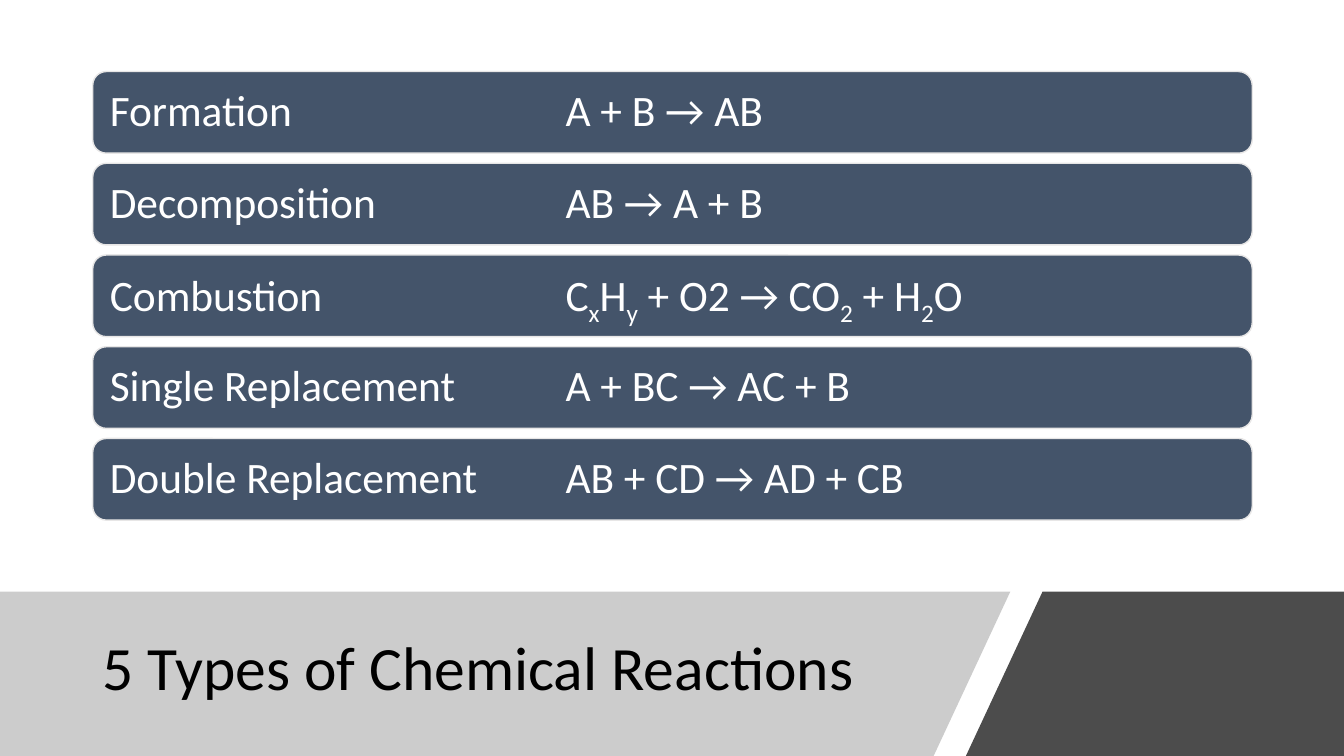
from lxml import etree
from pptx import Presentation
from pptx.dml.color import RGBColor
from pptx.enum import shapes, text
from pptx.oxml.ns import qn
from pptx.util import Inches, Pt

TITLE = "5 Types of Chemical Reactions"
# An underscore sets the next character as a subscript.
REACTIONS = [
    ("Formation", "A + B → AB"),
    ("Decomposition", "AB → A + B"),
    ("Combustion", "C_xH_y + O2 → CO_2 + H_2O"),
    ("Single Replacement", "A + BC → AC + B"),
    ("Double Replacement", "AB + CD → AD + CB"),
]
COLORS = {"bar": "44546A", "edge": "E7E6E6", "light": "FFFFFF",
          "black": "000000", "gray": "808080"}
FONT = "Calibri"

SLIDE_W, SLIDE_H = 13.33, 7.5
BAND_TOP = 5.87
BANDS = [  # corners, colour, opacity in percent
    ([(0, BAND_TOP), (10.02, BAND_TOP), (9.26, SLIDE_H), (0, SLIDE_H)], "gray", 40),
    ([(10.34, BAND_TOP), (SLIDE_W, BAND_TOP), (SLIDE_W, SLIDE_H), (9.58, SLIDE_H)], "black", 70),
]
BAR_LEFT, BAR_TOP, BAR_W, BAR_H, BAR_PITCH = 0.92, 0.71, 11.5, 0.81, 0.91
EQUATION_TAB = 4.52


def color(name):
    return RGBColor.from_string(COLORS[name])


def write(shape, content, size, ink, inset=0.1, tab=None):
    """Fill a shape with one left-aligned line, with subscripts and a tab stop."""
    frame = shape.text_frame
    frame.word_wrap = True
    frame.auto_size = text.MSO_AUTO_SIZE.NONE
    frame.vertical_anchor = text.MSO_ANCHOR.MIDDLE
    frame.margin_left = frame.margin_right = Inches(inset)
    line = frame.paragraphs[0]
    line.alignment = text.PP_ALIGN.LEFT
    line.line_spacing = 0.9
    if tab:
        stops = etree.SubElement(line._p.get_or_add_pPr(), qn("a:tabLst"))
        etree.SubElement(stops, qn("a:tab"), pos=str(Inches(tab)), algn="l")

    first, *rest = content.split("_")
    pieces = [(first, False)]
    for part in rest:
        pieces += [(part[0], True), (part[1:], False)]
    for piece, subscript in pieces:
        run = line.add_run()
        run.text = piece
        run.font.name = FONT
        run.font.size = Pt(size)
        run.font.color.rgb = color(ink)
        if subscript:
            run.font._element.set("baseline", "-25000")


def add_band(slide, corners, fill, opacity):
    points = [(Inches(x), Inches(y)) for x, y in corners]
    builder = slide.shapes.build_freeform(*points[0])
    builder.add_line_segments(points[1:], close=True)
    band = builder.convert_to_shape()
    band.shadow.inherit = False
    band.line.fill.background()
    band.fill.solid()
    band.fill.fore_color.rgb = color(fill)
    tint = band._element.spPr.find(".//" + qn("a:srgbClr"))
    etree.SubElement(tint, qn("a:alpha"), val=str(opacity * 1000))


def add_bar(slide, row, name, equation):
    bar = slide.shapes.add_shape(
        shapes.MSO_SHAPE.ROUNDED_RECTANGLE, Inches(BAR_LEFT),
        Inches(BAR_TOP + row * BAR_PITCH), Inches(BAR_W), Inches(BAR_H))
    bar.shadow.inherit = False
    bar.fill.solid()
    bar.fill.fore_color.rgb = color("bar")
    bar.line.color.rgb = color("edge")
    bar.line.width = Pt(1)
    write(bar, f"{name}\t{equation}", size=31, ink="light", inset=0.13, tab=EQUATION_TAB)


def main():
    deck = Presentation()
    deck.slide_width, deck.slide_height = Inches(SLIDE_W), Inches(SLIDE_H)
    slide = deck.slides.add_slide(deck.slide_layouts[5])

    for corners, fill, opacity in BANDS:
        add_band(slide, corners, fill, opacity)

    title = slide.shapes.title
    title.left, title.top = Inches(0.92), Inches(6.05)
    title.width, title.height = Inches(8.44), Inches(1.2)
    write(title, TITLE, size=44, ink="black")
    slide.shapes._spTree.append(title._element)  # in front of the bands

    for row, (name, equation) in enumerate(REACTIONS):
        add_bar(slide, row, name, equation)

    deck.save("out.pptx")


if __name__ == "__main__":
    main()
